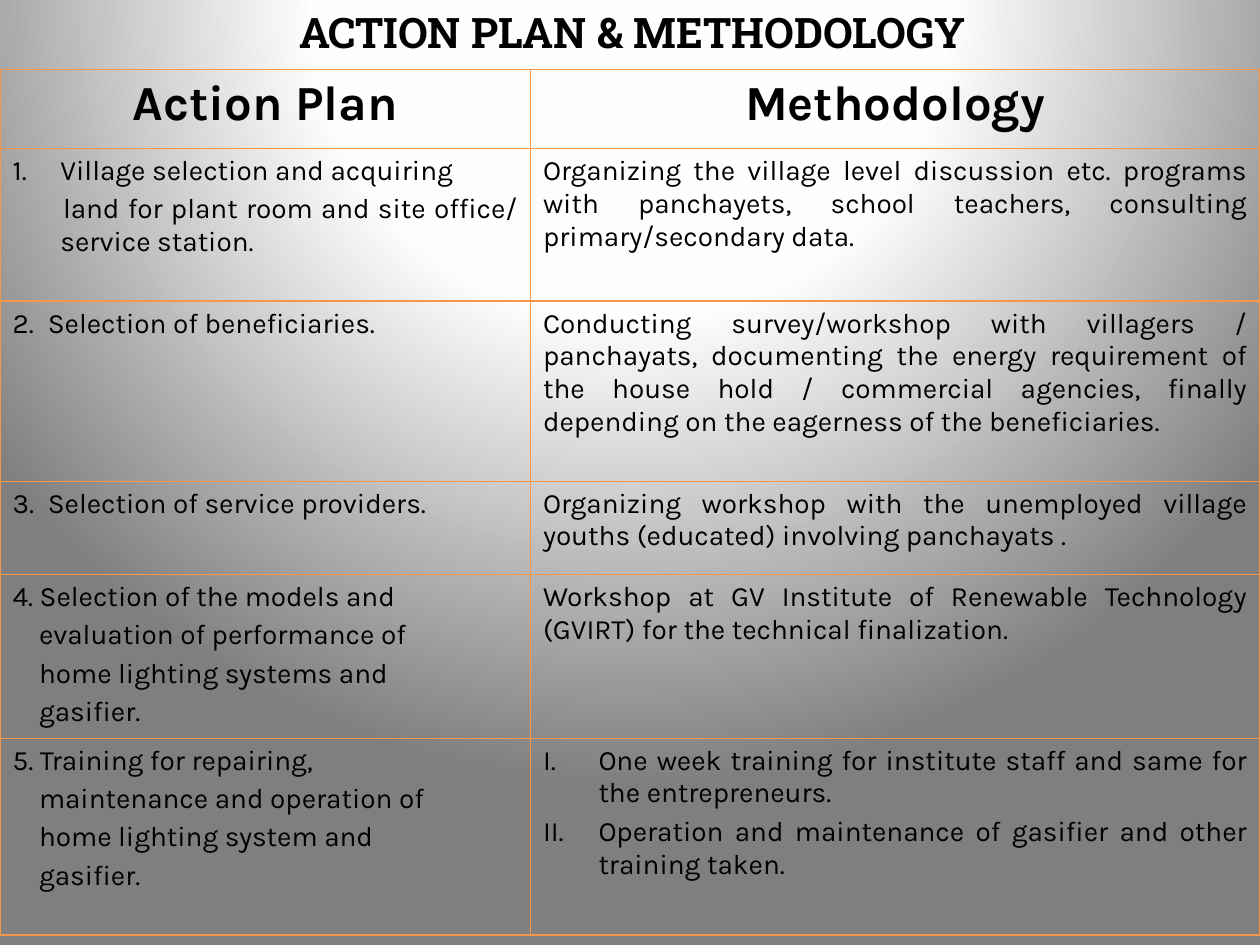
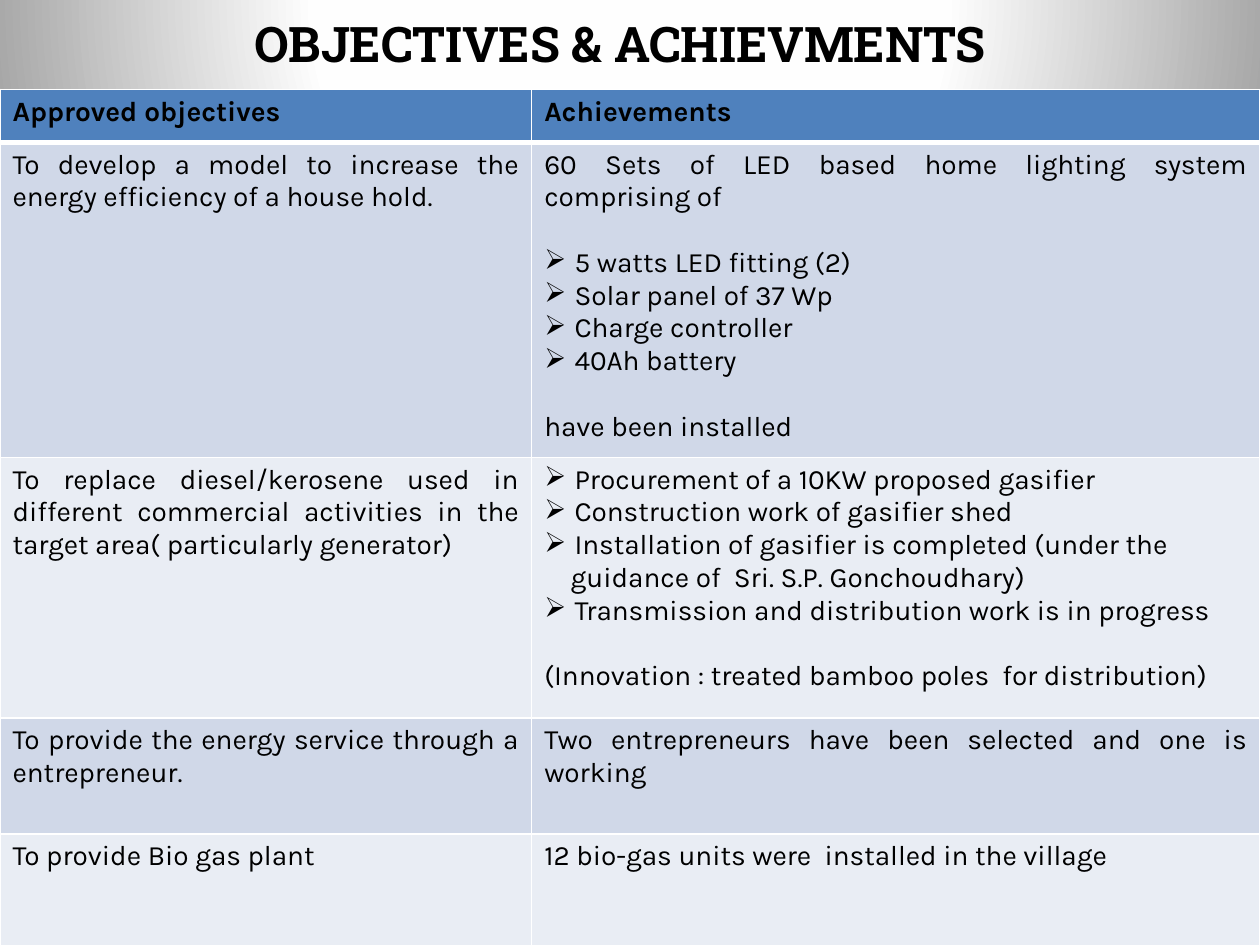
import dataclasses
import typing

import pptx
import pptx.dml.color
import pptx.enum.text
import pptx.oxml
import pptx.oxml.ns
import pptx.util

BLACK = pptx.dml.color.RGBColor(0x00, 0x00, 0x00)
WHITE = pptx.dml.color.RGBColor(0xFF, 0xFF, 0xFF)
NEAR_WHITE = pptx.dml.color.RGBColor(0xFE, 0xFE, 0xFE)
GREY = pptx.dml.color.RGBColor(0x7F, 0x7F, 0x7F)
ORANGE = pptx.dml.color.RGBColor(0xF7, 0x96, 0x46)
BLUE = pptx.dml.color.RGBColor(0x4F, 0x81, 0xBD)
BAND_DARK = pptx.dml.color.RGBColor(0xD0, 0xD8, 0xE8)
BAND_LIGHT = pptx.dml.color.RGBColor(0xE9, 0xED, 0xF4)

TITLE_FONT = "Roboto Slab"
BODY_FONT = "Karla"
BODY_SIZE = 16
PLAN_GAP = BODY_SIZE * 0.2
BLANK_LINE = 18.7
GRID_COLUMNS, GRID_ROWS = 100, 75
DRAWING = pptx.oxml.ns.nsdecls("a")
LEFT = pptx.enum.text.PP_ALIGN.LEFT
CENTER = pptx.enum.text.PP_ALIGN.CENTER
JUSTIFY = pptx.enum.text.PP_ALIGN.JUSTIFY


@dataclasses.dataclass
class Line:
    text: str
    left: float = 0
    first: float = 0
    bullet: typing.Optional[str] = None
    before: float = 0


def numbered(text, scheme, hang):
    return Line(text, hang, -hang, f'<a:buAutoNum {DRAWING} type="{scheme}"/>', PLAN_GAP)


def arrowed(text, before=0):
    return Line(text, 2.4, -2.4, f'<a:buChar {DRAWING} char="➢"/>', before)


def hanging_steps(first, *others):
    return [Line(first)] + [Line(text, 2.1, before=PLAN_GAP) for text in others]


class Deck:
    def __init__(self):
        self.deck = pptx.Presentation()
        self.deck.slide_width = pptx.util.Inches(10)
        self.deck.slide_height = pptx.util.Inches(7.5)
        self.page = None

    def across(self, columns):
        return pptx.util.Emu(round(self.deck.slide_width * columns / GRID_COLUMNS))

    def down(self, rows):
        return pptx.util.Emu(round(self.deck.slide_height * rows / GRID_ROWS))

    def add_page(self):
        self.page = self.deck.slides.add_slide(self.deck.slide_layouts[5])
        fill = self.page.background.fill
        fill.gradient()
        stops = "".join(
            f'<a:gs pos="{share * 1000}"><a:srgbClr val="{color}"/></a:gs>'
            for share, color in ((0, WHITE), (40, NEAR_WHITE), (100, GREY))
        )
        glow = pptx.oxml.parse_xml(
            f'<a:gradFill {DRAWING} rotWithShape="1"><a:gsLst>{stops}</a:gsLst>'
            '<a:path path="circle"><a:fillToRect l="50000" t="-80000" r="50000" b="180000"/>'
            "</a:path></a:gradFill>"
        )
        old = self.page.background._cSld.find(".//" + pptx.oxml.ns.qn("a:gradFill"))
        old.getparent().replace(old, glow)

    def add_span(self, para, text, size, font, bold):
        span = para.add_run()
        span.text = text
        span.font.size = pptx.util.Pt(size)
        span.font.name = font
        span.font.bold = bold
        span.font.color.rgb = BLACK

    def title(self, text, left, top, height, size):
        box = self.page.shapes.title
        box.left, box.top = self.across(left), self.down(top)
        box.width, box.height = self.across(95), self.down(height)
        frame = box.text_frame
        frame.word_wrap = True
        frame.auto_size = pptx.enum.text.MSO_AUTO_SIZE.SHAPE_TO_FIT_TEXT
        frame.vertical_anchor = pptx.enum.text.MSO_ANCHOR.TOP
        para = frame.paragraphs[0]
        para.alignment = CENTER
        self.add_span(para, text, size, TITLE_FONT, True)

    def borders(self, cell, color, top, bottom):
        properties = cell._tc.get_or_add_tcPr()
        for index, (side, width) in enumerate((("L", 1), ("R", 1), ("T", top), ("B", bottom))):
            edge = pptx.oxml.parse_xml(
                f'<a:ln{side} {DRAWING} w="{pptx.util.Pt(width)}"><a:solidFill>'
                f'<a:srgbClr val="{color}"/></a:solidFill></a:ln{side}>'
            )
            properties.insert(index, edge)

    def fill_cell(self, cell, lines, size, bold, alignment):
        frame = cell.text_frame
        for index, line in enumerate(lines):
            para = frame.add_paragraph() if index else frame.paragraphs[0]
            para.alignment = LEFT if "\t" in line.text else alignment
            para.space_before = pptx.util.Pt(line.before if index else 0)
            properties = para._p.get_or_add_pPr()
            properties.set("marL", str(self.across(line.left)))
            properties.set("indent", str(self.across(line.first)))
            if line.bullet:
                properties.append(pptx.oxml.parse_xml(line.bullet))
            self.add_span(para, line.text, size, BODY_FONT, bold)

    def table(self, top, widths, heights, rows, border, fills=None,
              header_size=BODY_SIZE, header_align=JUSTIFY, header_rule=1):
        frame = self.page.shapes.add_table(
            len(rows), len(widths), 0, self.down(top),
            self.across(sum(widths)), self.down(sum(heights)))
        table = frame.table
        table.first_row = table.horz_banding = False
        for column, width in zip(table.columns, widths):
            column.width = self.across(width)
        for index, (height, texts) in enumerate(zip(heights, rows)):
            table.rows[index].height = self.down(height)
            header = index == 0
            for cell, lines in zip(table.rows[index].cells, texts):
                if isinstance(lines, str):
                    lines = [Line(lines)]
                self.fill_cell(cell, lines, header_size if header else BODY_SIZE, header,
                               header_align if header else JUSTIFY)
                if fills:
                    cell.fill.solid()
                    cell.fill.fore_color.rgb = fills[index]
                else:
                    cell.fill.background()
                self.borders(cell, border, header_rule if index == 1 else 1,
                             header_rule if header else 1)


PLAN_ROWS = [
    ("Action Plan", "Methodology"),
    ([numbered("Village selection and acquiring", "arabicPeriod", 3.8),
      Line("land for plant room and site office/ service station.", 3.8, 0.2, before=PLAN_GAP)],
     "Organizing the village level discussion etc. programs with panchayets, school teachers, "
     "consulting primary/secondary data."),
    ([Line("2.\tSelection of beneficiaries.", 2.8, -2.8)],
     "Conducting survey/workshop with villagers / panchayats, documenting the energy "
     "requirement of the house hold / commercial agencies, finally depending on the "
     "eagerness of the beneficiaries."),
    ([Line("3.\tSelection of service providers.", 2.8, -2.8)],
     "Organizing workshop with the unemployed village youths (educated) involving panchayats ."),
    (hanging_steps("4. Selection of the models and", "evaluation of performance of",
                   "home lighting systems and", "gasifier."),
     "Workshop at GV Institute of Renewable Technology (GVIRT) for the technical finalization."),
    (hanging_steps("5. Training for repairing,", "maintenance and operation of",
                   "home lighting system and", "gasifier."),
     [numbered(text, "romanUcPeriod", 4.4) for text in (
         "One week training for institute staff and same for the entrepreneurs.",
         "Operation and maintenance of gasifier and other training taken.")]),
]

OBJECTIVE_ROWS = [
    ("Approved objectives", "Achievements"),
    ("To develop a model to increase the energy efficiency of a house hold.",
     [Line("60 Sets of LED based home lighting system comprising of"),
      arrowed("5 watts LED fitting (2)", BLANK_LINE),
      arrowed("Solar panel of 37 Wp"),
      arrowed("Charge controller"),
      arrowed("40Ah battery"),
      Line("have been installed", before=BLANK_LINE)]),
    ("To replace diesel/kerosene used in different commercial activities in the target area"
     "( particularly generator)",
     [arrowed("Procurement of a 10KW proposed gasifier"),
      arrowed("Construction work of gasifier shed"),
      arrowed("Installation of gasifier is completed (under the"),
      Line("guidance of  Sri. S.P. Gonchoudhary)", 2.1),
      arrowed("Transmission and distribution work is in progress"),
      Line("(Innovation : treated bamboo poles  for distribution)", before=BLANK_LINE)]),
    ("To provide the energy service through a entrepreneur.",
     "Two entrepreneurs have been selected and one is working"),
    ("To provide Bio gas plant", "12 bio-gas units were  installed in the village"),
]


def main():
    show = Deck()

    show.add_page()
    show.title("ACTION PLAN & METHODOLOGY", left=2.7, top=0, height=5, size=24)
    show.table(5.5, (42.1, 57.9), (6.3, 12.1, 14.3, 7.4, 13, 15.6), PLAN_ROWS, ORANGE,
               header_size=28, header_align=CENTER)

    show.add_page()
    show.title("OBJECTIVES & ACHIEVMENTS", left=1.7, top=0.6, height=5.7, size=28)
    show.table(7.1, (42.2, 57.8), (4.2, 25, 20.7, 9.2, 9.2), OBJECTIVE_ROWS, WHITE,
               fills=(BLUE, BAND_DARK, BAND_LIGHT, BAND_DARK, BAND_LIGHT), header_rule=3)

    show.deck.save("out.pptx")


if __name__ == "__main__":
    main()
